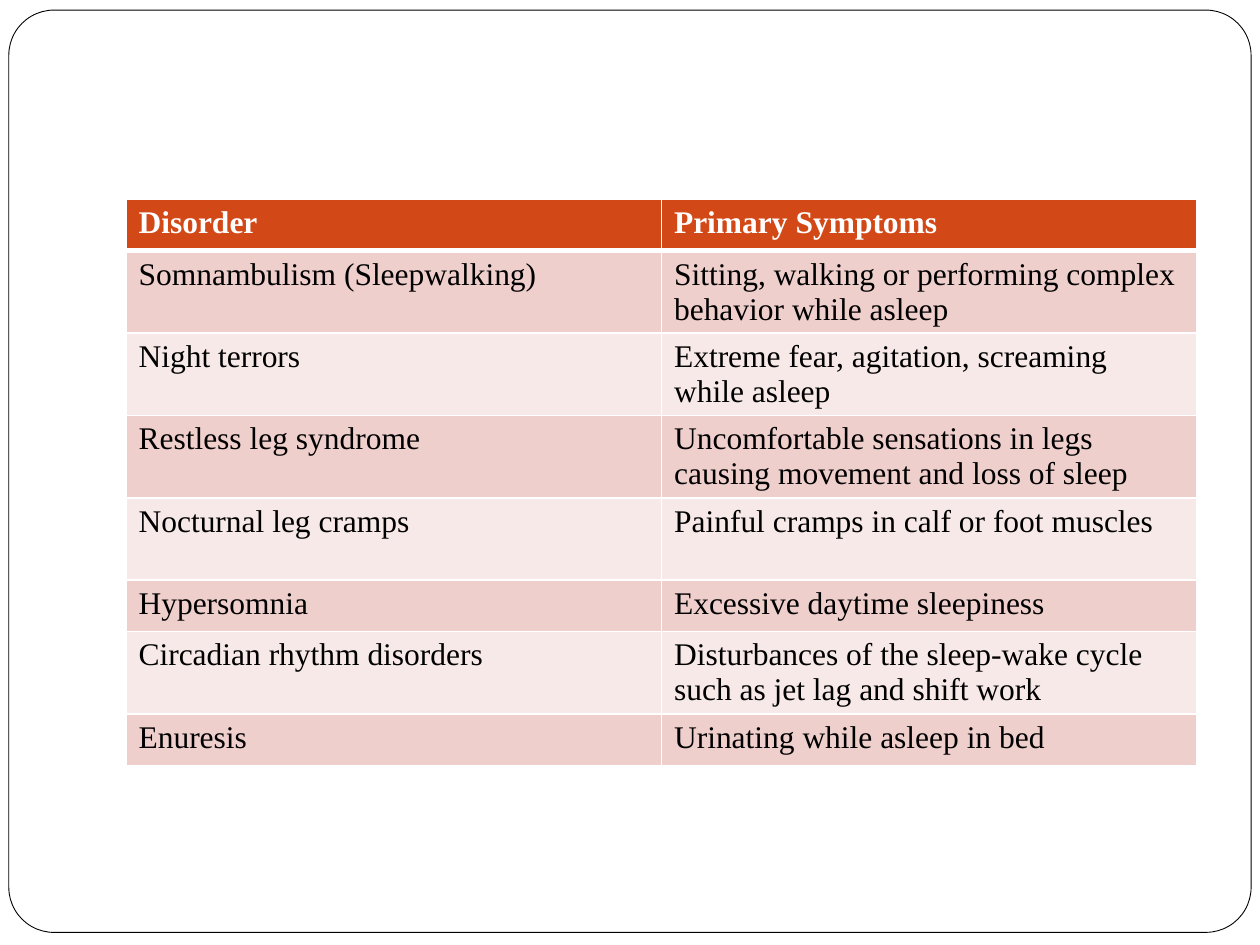
import dataclasses

import pptx
import pptx.dml.color
import pptx.enum.shapes
import pptx.oxml
import pptx.oxml.ns
import pptx.util

Inches = pptx.util.Inches
Pt = pptx.util.Pt


def rgb(code):
    return pptx.dml.color.RGBColor.from_string(code)


@dataclasses.dataclass(frozen=True)
class Theme:
    font: str = "Times New Roman"
    size: float = 18
    white: str = "FFFFFF"
    black: str = "000000"
    header: str = "D34817"
    bands: tuple = ("EFCFCC", "F7E9E8")
    frame_line: float = 0.5
    grid_line: float = 1
    header_line: float = 3


THEME = Theme()
SINGLE, DOUBLE = 0.41, 0.65
HEADINGS = ("Disorder", "Primary Symptoms")
DISORDERS = [
    ("Somnambulism (Sleepwalking)",
     "Sitting, walking or performing complex behavior while asleep", DOUBLE),
    ("Night terrors", "Extreme fear, agitation, screaming while asleep", DOUBLE),
    ("Restless leg syndrome",
     "Uncomfortable sensations in legs causing movement and loss of sleep", DOUBLE),
    ("Nocturnal leg cramps", "Painful cramps in calf or foot muscles", DOUBLE),
    ("Hypersomnia", "Excessive daytime sleepiness", SINGLE),
    ("Circadian rhythm disorders",
     "Disturbances of the sleep-wake cycle such as jet lag and shift work", DOUBLE),
    ("Enuresis", "Urinating while asleep in bed", SINGLE),
]


def add_frame(page, box):
    frame = page.shapes.add_shape(
        pptx.enum.shapes.MSO_SHAPE.ROUNDED_RECTANGLE, *map(Inches, box))
    frame.adjustments[0] = 0.049
    frame.shadow.inherit = False
    frame.fill.solid()
    frame.fill.fore_color.rgb = rgb(THEME.white)
    frame.line.color.rgb = rgb(THEME.black)
    frame.line.width = Pt(THEME.frame_line)


def set_borders(cell, widths):
    properties = cell._tc.get_or_add_tcPr()
    for side, width in widths.items():
        properties.append(pptx.oxml.parse_xml(
            f'<a:ln{side} {pptx.oxml.ns.nsdecls("a")} w="{Pt(width)}">'
            f'<a:solidFill><a:srgbClr val="{THEME.white}"/></a:solidFill>'
            f'</a:ln{side}>'))


def fill_cell(cell, text, row):
    is_header = row == 0
    widths = dict.fromkeys("LRTB", THEME.grid_line)
    if row < 2:
        widths["B" if is_header else "T"] = THEME.header_line
    set_borders(cell, widths)
    cell.fill.solid()
    cell.fill.fore_color.rgb = rgb(
        THEME.header if is_header else THEME.bands[(row - 1) % 2])
    span = cell.text_frame.paragraphs[0].add_run()
    span.text = text
    formats = {"name": THEME.font, "size": Pt(THEME.size), "bold": is_header}
    for name, value in formats.items():
        setattr(span.font, name, value)
    span.font.color.rgb = rgb(THEME.white if is_header else THEME.black)


def add_disorder_table(page, box):
    left, top, width = box
    rows = [(*HEADINGS, SINGLE), *DISORDERS]
    height = sum(row[-1] for row in rows)
    table = page.shapes.add_table(
        len(rows), len(HEADINGS), *map(Inches, (left, top, width, height))).table
    for column in table.columns:
        column.width = Inches(width / len(HEADINGS))
    for index, (*texts, row_height) in enumerate(rows):
        table.rows[index].height = Inches(row_height)
        for column, text in enumerate(texts):
            fill_cell(table.cell(index, column), text, index)


def main():
    deck = pptx.Presentation()
    deck.slide_width, deck.slide_height = Inches(10), Inches(7.5)
    page = deck.slides.add_slide(deck.slide_layouts[6])
    add_frame(page, (0.07, 0.08, 9.86, 7.32))
    add_disorder_table(page, (1, 1.58, 8.5))
    deck.save("out.pptx")


if __name__ == "__main__":
    main()
